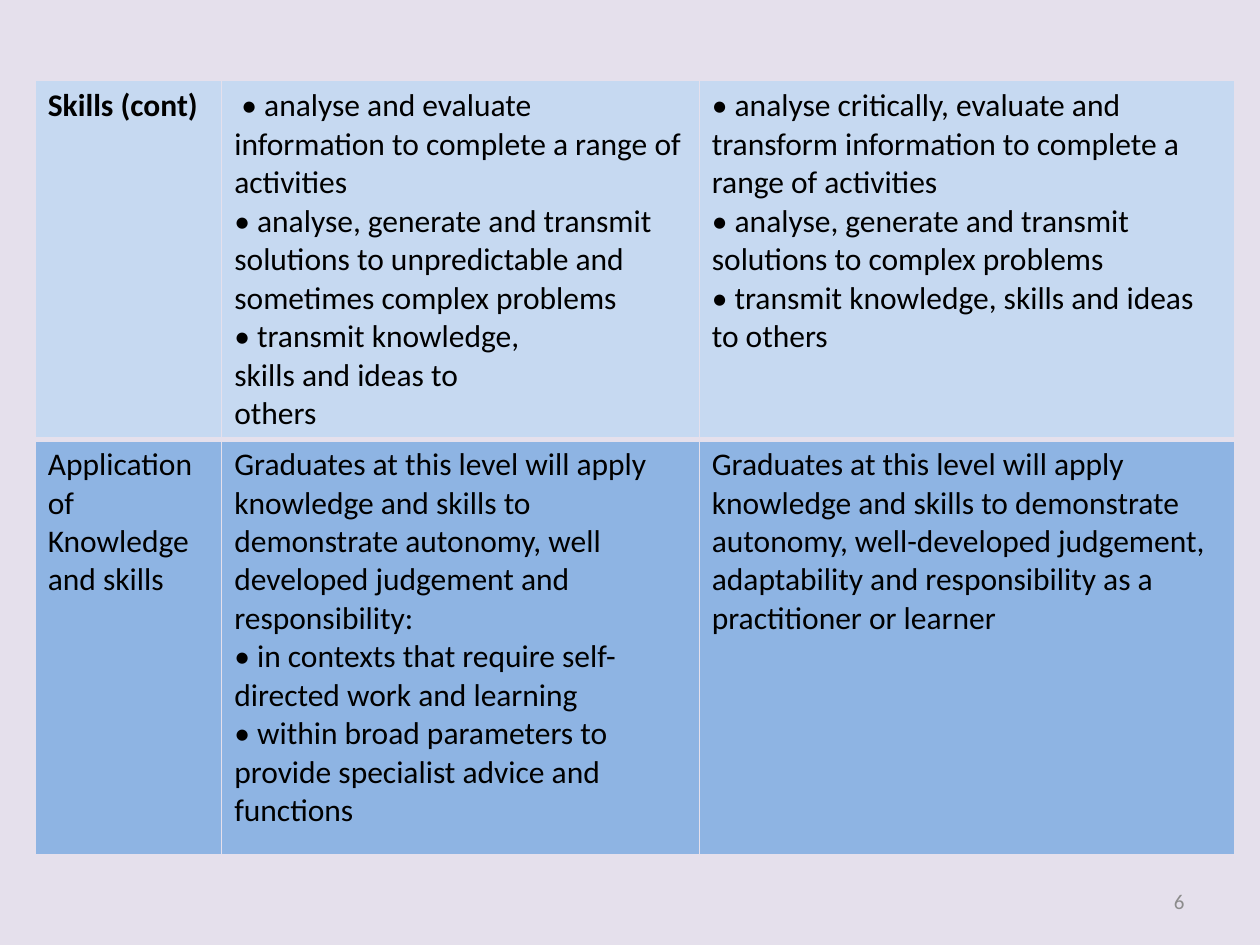
from lxml import etree
from pptx import Presentation
from pptx.dml.color import RGBColor
from pptx.enum import text
from pptx.oxml import ns
from pptx.util import Inches, Pt

BACKGROUND = "E5E0EC"


def paint(color_format, hex_color):
    color_format.rgb = RGBColor.from_string(hex_color)


def add_border(cell, side, points):
    line = etree.SubElement(cell._tc.get_or_add_tcPr(), ns.qn(f"a:ln{side}"), w=str(Pt(points)))
    solid = etree.SubElement(line, ns.qn("a:solidFill"))
    etree.SubElement(solid, ns.qn("a:srgbClr"), val=BACKGROUND)


prs = Presentation()
prs.slide_width, prs.slide_height = Inches(10), Inches(7.5)
slide = prs.slides.add_slide(prs.slide_layouts[6])
slide.background.fill.solid()
paint(slide.background.fill.fore_color, BACKGROUND)

# Table content: each cell is a list of paragraphs
skills = [
    ["Skills (cont)"],
    [" • analyse and evaluate information to complete a range of activities",
     "• analyse, generate and transmit solutions to unpredictable and",
     "sometimes complex problems",
     "• transmit knowledge,",
     "skills and ideas to",
     "others"],
    ["• analyse critically, evaluate and transform information to complete a range of activities",
     "• analyse, generate and transmit solutions to complex problems",
     "• transmit knowledge, skills and ideas to others"],
]
application = [
    ["Application of Knowledge and skills"],
    ["Graduates at this level will apply knowledge and skills to demonstrate autonomy, "
     "well developed judgement and responsibility:",
     "• in contexts that require self-directed work and learning",
     "• within broad parameters to provide specialist advice and",
     "functions"],
    ["Graduates at this level will apply knowledge and skills to demonstrate",
     "autonomy, well-developed judgement,",
     "adaptability and responsibility as a",
     "practitioner or learner"],
]
# Row content, fill, height, width of the line above and below
rows = [(skills, "C6D9F1", 2.65, 1, 3), (application, "8EB4E3", 3.3, 3, 1)]
column_widths = [1.48, 3.79, 4.25]

# Level comparison table
levels = slide.shapes.add_table(len(rows), len(column_widths), Inches(0.28), Inches(0.64),
                                Inches(sum(column_widths)), Inches(5.95)).table
levels.horz_banding = False
for column, width in zip(levels.columns, column_widths):
    column.width = Inches(width)

for r, (contents, fill, height, above, below) in enumerate(rows):
    levels.rows[r].height = Inches(height)
    for c, paragraphs in enumerate(contents):
        cell = levels.cell(r, c)
        for side, points in (("L", 1), ("R", 1), ("T", above), ("B", below)):
            add_border(cell, side, points)
        cell.fill.solid()
        paint(cell.fill.fore_color, fill)
        for i, wording in enumerate(paragraphs):
            paragraph = cell.text_frame.paragraphs[0] if i == 0 else cell.text_frame.add_paragraph()
            run = paragraph.add_run()
            run.text = wording
            run.font.name, run.font.size = "Calibri", Pt(18)
            run.font.bold = r == 0 and c == 0
            paint(run.font.color, "000000")

# Slide number
page = slide.shapes.add_textbox(Inches(7.17), Inches(6.95), Inches(2.33), Inches(0.4)).text_frame
page.word_wrap = True
page.vertical_anchor = text.MSO_ANCHOR.MIDDLE
page.paragraphs[0].alignment = text.PP_ALIGN.RIGHT
number = page.paragraphs[0].add_run()
number.text = "6"
number.font.name, number.font.size = "Calibri", Pt(12)
paint(number.font.color, "8C8C8C")

prs.save("out.pptx")
